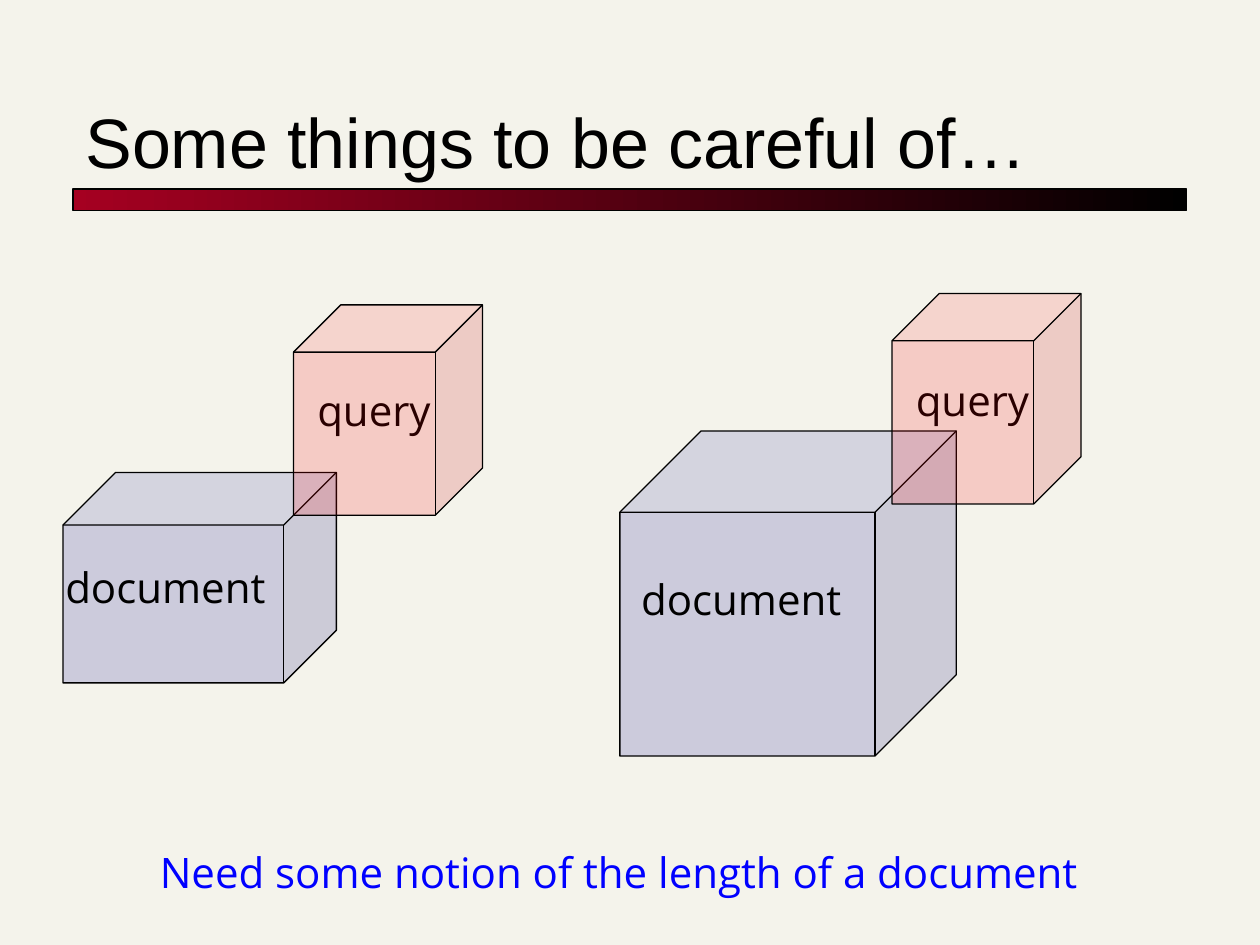
from pptx import Presentation
from pptx.dml.color import RGBColor
from pptx.enum.shapes import MSO_SHAPE
from pptx.enum.text import MSO_ANCHOR, MSO_AUTO_SIZE
from pptx.oxml.ns import qn
from pptx.util import Inches, Pt
from lxml import etree

COLORS = {
    "background": "F4F3EB",
    "text": "000000",
    "note": "0000FF",
    "document": "000090",
    "query": "FF0000",
    "bar_start": "A50021",
    "bar_end": "000000",
}
CUBE_OPACITY = 16  # percent


def add_outlined(preset, left, top, width, height):
    shape = slide.shapes.add_shape(
        preset, Inches(left), Inches(top), Inches(width), Inches(height))
    shape.shadow.inherit = False
    shape.line.color.rgb = RGBColor.from_string(COLORS["text"])
    shape.line.width = Pt(0.75)
    return shape


def add_label(text, left, top, width, height, size=24, font="Open Sans",
              color="text", wrap=False, anchor=MSO_ANCHOR.TOP):
    box = slide.shapes.add_textbox(
        Inches(left), Inches(top), Inches(width), Inches(height))
    frame = box.text_frame
    frame.word_wrap = wrap
    frame.vertical_anchor = anchor
    frame.auto_size = MSO_AUTO_SIZE.NONE
    run = frame.paragraphs[0].add_run()
    run.text = text
    run.font.size = Pt(size)
    run.font.name = font
    run.font.color.rgb = RGBColor.from_string(COLORS[color])


prs = Presentation()
prs.slide_width, prs.slide_height = Inches(10), Inches(7.5)
slide = prs.slides.add_slide(prs.slide_layouts[6])
slide.background.fill.solid()
slide.background.fill.fore_color.rgb = RGBColor.from_string(COLORS["background"])

# Title and the gradient bar below it
title_bar = add_outlined(MSO_SHAPE.RECTANGLE, 0.58, 1.5, 8.84, 0.17)
title_bar.fill.gradient()
title_bar.fill.gradient_angle = 0
for stop, position, color in zip(title_bar.fill.gradient_stops, (0, 1),
                                 ("bar_start", "bar_end")):
    stop.position = position
    stop.color.rgb = RGBColor.from_string(COLORS[color])
add_label("Some things to be careful of…", 0.58, 0.42, 8.83, 1.08, size=40,
          font="Arial", wrap=True, anchor=MSO_ANCHOR.BOTTOM)

# Two comparisons, each a document cube overlapped by a query cube.
# The query cube is drawn over the labels, the document cube under them.
comparisons = [
    {"document": (0.5, 3.75, 2.17, 1.67), "document_label": (0.42, 4.41),
     "query": (2.33, 2.42, 1.5, 1.67), "query_label": (2.42, 3)},
    {"document": (4.92, 3.42, 2.67, 2.58), "document_label": (4.99, 4.5),
     "query": (7.08, 2.33, 1.5, 1.67), "query_label": (7.17, 2.92)},
]
for comparison in comparisons:
    for kind in ("document", "query"):
        if kind == "query":
            add_label("query", *comparison["query_label"], 1.13, 0.5)
            add_label("document", *comparison["document_label"], 1.84, 0.5)
        cube = add_outlined(MSO_SHAPE.CUBE, *comparison[kind])
        cube.fill.solid()
        cube.fill.fore_color.rgb = RGBColor.from_string(COLORS[kind])
        fill_color = cube._element.spPr.find(qn("a:solidFill"))[0]
        etree.SubElement(fill_color, qn("a:alpha"), val=str(CUBE_OPACITY * 1000))

add_label("Need some notion of the length of a document", 1.17, 6.67, 8.08, 0.5,
          color="note", wrap=True)

prs.save("out.pptx")
